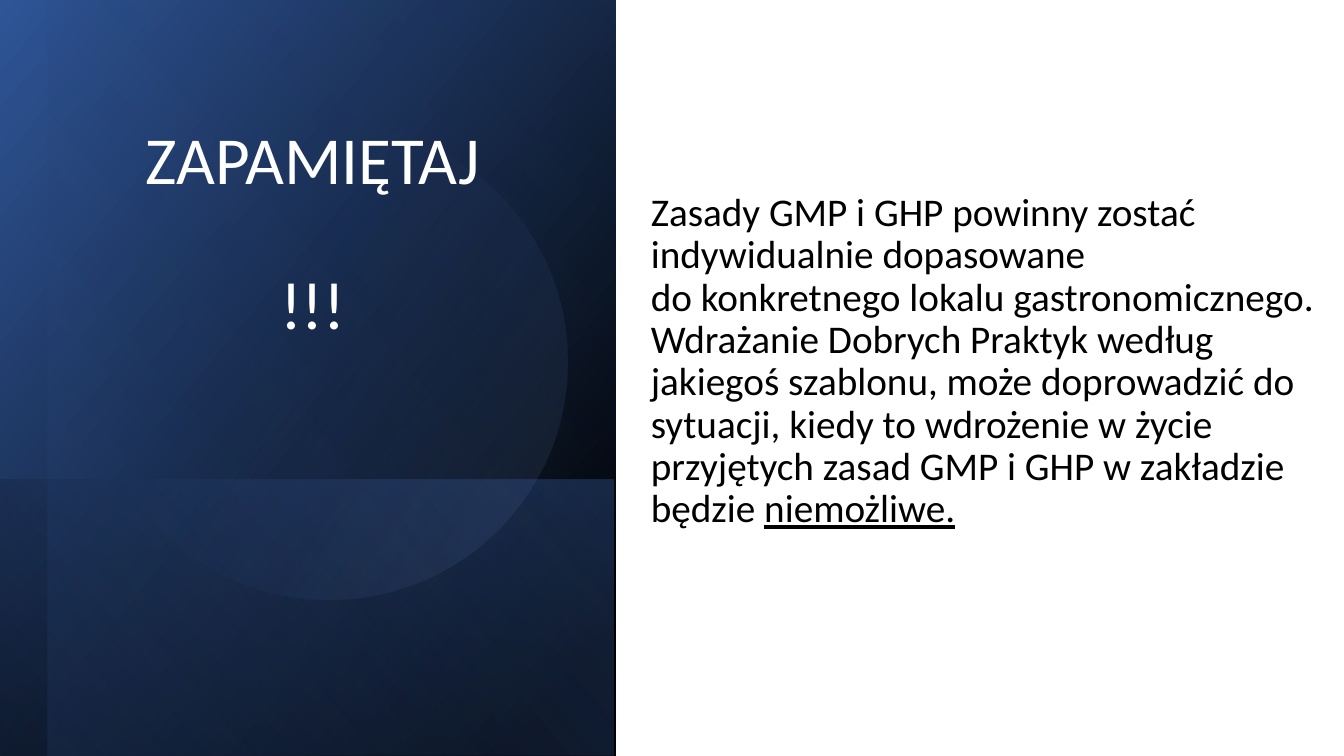
from lxml import etree
from pptx import Presentation
from pptx import util as u
from pptx.dml.color import RGBColor
from pptx.enum import shapes, text
from pptx.oxml.ns import qn

SCALE = 12192000 / 1344  # EMU per px


def px(*lengths):
    return [u.Emu(round(n * SCALE)) for n in lengths]


def color(hex_value):
    return RGBColor.from_string(hex_value)


deck = Presentation()
deck.slide_width, deck.slide_height = px(1344, 756)
slide = deck.slides.add_slide(deck.slide_layouts[6])

# Layered gradient panel: kind, box, rotation, flipped, angle, (position %, colour, opacity %)
RECT, OVAL = shapes.MSO_SHAPE.RECTANGLE, shapes.MSO_SHAPE.OVAL
layers = [
    (RECT, (-70, 70, 756, 616), 90, True, 50, [(8, "000000", 100), (100, "2F5597", 100)]),
    (RECT, (168, 310, 276, 615), 90, True, 130, [(2, "4472C4", 29), (100, "000000", 30)]),
    (RECT, (-46, 94, 756, 568), 90, True, 130, [(0, "000000", 0), (99, "4472C4", 11)]),
    (OVAL, (91, 124, 476, 476), 101.6, False, 290, [(39, "4472C4", 0), (100, "8FAADC", 15)]),
]
for kind, box, rotation, flipped, angle, stops in layers:
    layer = slide.shapes.add_shape(kind, *px(*box))
    layer.shadow.inherit = False
    layer.line.fill.background()
    layer.rotation = rotation
    if flipped:
        layer._element.spPr.find(qn("a:xfrm")).set("flipH", "1")
    layer.fill.gradient()
    layer.fill.gradient_angle = 360 - angle  # python-pptx counts anticlockwise
    for stop, (position, hex_value, _) in zip(layer.fill.gradient_stops, stops):
        stop.position = position / 100
        stop.color.rgb = color(hex_value)
    rgb_nodes = layer._element.spPr.iter(qn("a:srgbClr"))
    for node, (_, _, opacity) in zip(list(rgb_nodes), stops):
        etree.SubElement(node, qn("a:alpha")).set("val", str(opacity * 1000))

# Heading on the panel
heading = slide.shapes.add_textbox(*px(66, 16, 494, 333)).text_frame
heading.word_wrap = True
heading.vertical_anchor = text.MSO_ANCHOR.BOTTOM
heading.text = "ZAPAMIĘTAJ\n!!!"
for line in heading.paragraphs:
    line.alignment = text.PP_ALIGN.CENTER
    line.line_spacing = 0.9
    line.font.name, line.font.size = "Calibri", u.Pt(48)
    line.font.color.rgb = color("FFFFFF")
heading.paragraphs[1].space_before = u.Pt(52)

# Advice on the white side
advice = slide.shapes.add_textbox(*px(641, 16, 684, 692)).text_frame
advice.word_wrap = True
advice.margin_right = 0
advice.vertical_anchor = text.MSO_ANCHOR.MIDDLE
rule = advice.paragraphs[0]
rule.text = (
    "Zasady GMP i GHP powinny zostać indywidualnie dopasowane \v"
    "do konkretnego lokalu gastronomicznego. Wdrażanie Dobrych Praktyk "
    "według jakiegoś szablonu, może doprowadzić do sytuacji, kiedy to "
    "wdrożenie w życie przyjętych zasad GMP i GHP w zakładzie będzie "
)
warning = rule.add_run()
warning.text = "niemożliwe."
warning.font.underline = True
rule.line_spacing = 0.9
rule.space_before = u.Pt(10)
rule.font.name, rule.font.size = "Calibri", u.Pt(28)
rule.font.color.rgb = color("000000")

deck.save("out.pptx")
